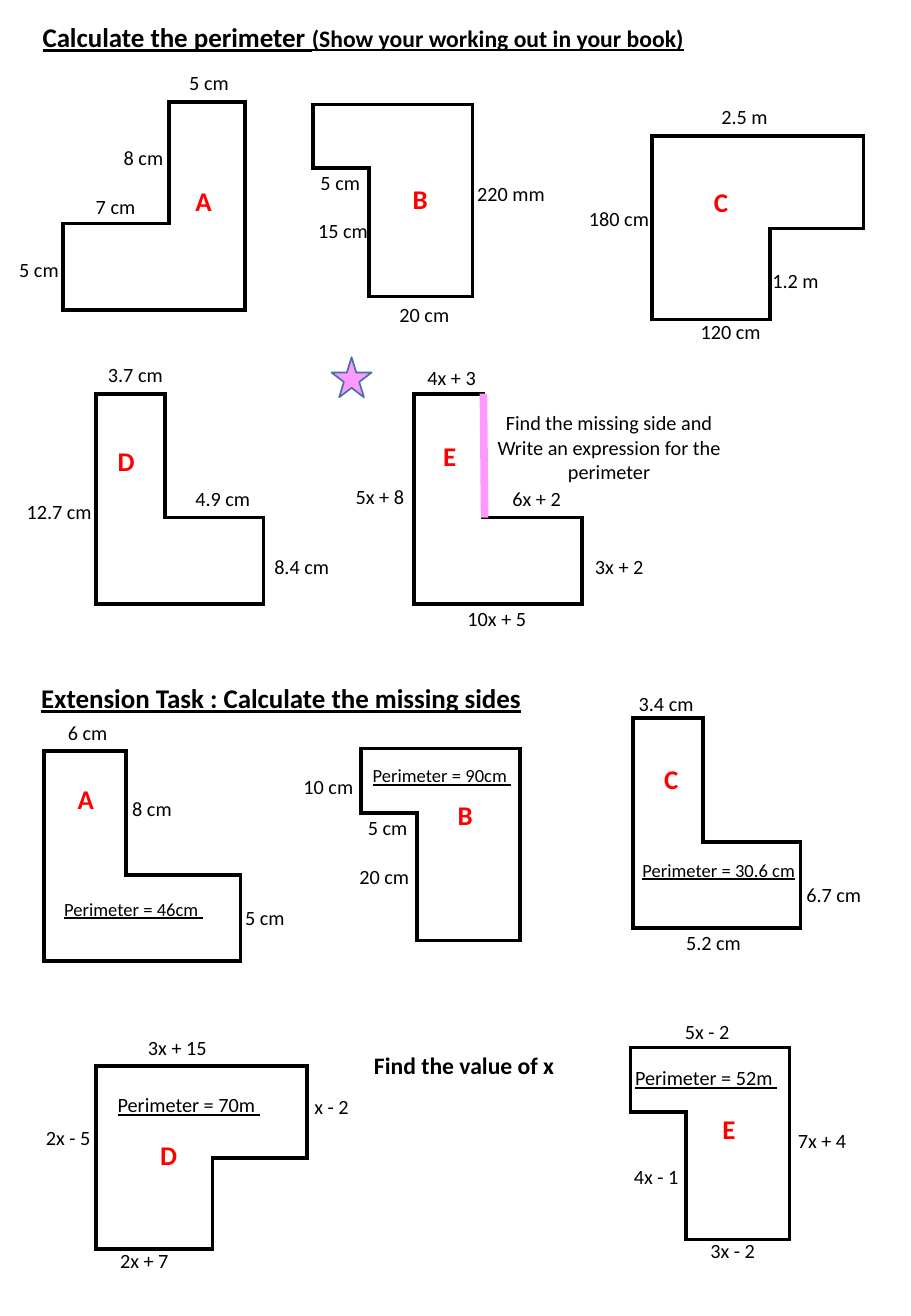
from lxml import etree
from pptx import Presentation
from pptx.dml.color import RGBColor
from pptx.enum.shapes import MSO_CONNECTOR, MSO_SHAPE
from pptx.enum.text import MSO_ANCHOR, MSO_AUTO_SIZE, PP_ALIGN
from pptx.oxml.ns import qn
from pptx.util import Inches, Pt

STAR, STRAIGHT = MSO_SHAPE.STAR_5_POINT, MSO_CONNECTOR.STRAIGHT
TOP, FIT = MSO_ANCHOR.TOP, MSO_AUTO_SIZE.SHAPE_TO_FIT_TEXT
LEFT, CENTER = PP_ALIGN.LEFT, PP_ALIGN.CENTER
FONT = "Calibri"
COLORS = {"ink": "000000", "letter": "FF0000", "pink": "FF99FF", "star": "43739E"}
LETTER_W, LABEL_H, LETTER_H = 0.34, 0.3, 0.37

PERIMETER_TASKS = [
    dict(letter="A", box=(0.52, 0.84, 1.5, 1.71), notch=("tl", 0.87, 1.0), at=(0.99, 0.63),
         labels=[(0.94, -0.31, 0.53, "5 cm"), (0.17, 0.71, 0.53, "7 cm"),
                 (-0.46, 1.23, 0.53, "5 cm"), (0.4, 0.31, 0.53, "8 cm")]),
    dict(letter="B", box=(2.58, 0.86, 1.31, 1.58), notch=("bl", 0.46, 1.06), at=(0.72, 0.59),
         labels=[(0.61, 1.58, 0.62, "20 cm"), (-0.04, 0.49, 0.53, "5 cm"),
                 (1.25, 0.58, 0.77, "220 mm"), (-0.06, 0.89, 0.62, "15 cm")]),
    dict(letter="C", box=(5.37, 1.12, 1.74, 1.51), notch=("br", 0.77, 0.75), at=(0.41, 0.36),
         wrap=True,
         labels=[(0.47, -0.31, 0.71, "2.5 m"), (-0.62, 0.53, 0.71, "180 cm"),
                 (0.3, 1.46, 0.74, "120 cm"), (0.89, 1.04, 0.61, "1.2 m")]),
    dict(letter="D", box=(0.79, 3.24, 1.38, 1.73), notch=("tr", 0.81, 1.02), at=(0.08, 0.37),
         labels=[(-0.67, 0.82, 0.75, "12.7 cm"), (0, -0.31, 0.66, "3.7 cm"),
                 (0.72, 0.71, 0.66, "4.9 cm"), (1.37, 1.27, 0.66, "8.4 cm")]),
    dict(letter="E", box=(3.41, 3.24, 1.38, 1.73), notch=("tr", 0.81, 1.02), at=(0.14, 0.33),
         labels=[(-0.58, 0.7, 0.61, "5x + 8"), (1.39, 1.27, 0.61, "3x + 2"),
                 (0.71, 0.71, 0.61, "6x + 2"), (0.34, 1.7, 0.69, "10x + 5"),
                 (0.01, -0.28, 0.61, "4x + 3")]),
]
EXTENSION_TASKS = [
    dict(letter="A", box=(0.36, 6.18, 1.62, 1.73), notch=("tr", 0.94, 1.02), at=(0.18, 0.21),
         total=(0.07, 1.16, 1.36, 11, "Perimeter = 46cm "),
         labels=[(0.1, -0.3, 0.53, "6 cm"), (1.56, 1.22, 0.53, "5 cm"),
                 (0.63, 0.32, 0.53, "8 cm")]),
    dict(letter="B", box=(2.97, 6.16, 1.31, 1.58), notch=("bl", 0.46, 1.05), at=(0.7, 0.36),
         total=(0, 0.08, 1.36, 11, "Perimeter = 90cm "),
         labels=[(-0.04, 0.5, 0.53, "5 cm"), (-0.57, 0.16, 0.62, "10 cm"),
                 (-0.11, 0.9, 0.62, "20 cm")]),
    dict(letter="C", box=(5.21, 5.91, 1.38, 1.73), notch=("tr", 0.8, 1.02), at=(0.16, 0.32),
         total=(-0.02, 1.11, 1.51, 11, "Perimeter = 30.6 cm"),
         labels=[(-0.05, -0.27, 0.66, "3.4 cm"), (0.34, 1.7, 0.66, "5.2 cm"),
                 (1.33, 1.3, 0.66, "6.7 cm")]),
    dict(letter="D", box=(0.79, 8.77, 1.74, 1.51), notch=("br", 0.78, 0.75), at=(0.43, 0.55),
         wrap=True, total=(0.08, 0.17, 1.39, 12, "Perimeter = 70m "),
         labels=[(0.33, -0.3, 0.8, "3x + 15"), (0.1, 1.45, 0.8, "2x + 7"),
                 (-0.51, 0.44, 0.8, "2x - 5"), (1.7, 0.19, 0.8, "x - 2")]),
    dict(letter="E", box=(5.19, 8.62, 1.31, 1.58), notch=("bl", 0.46, 1.05), at=(0.66, 0.49),
         wrap=True, total=(-0.06, 0.1, 1.39, 12, "Perimeter = 52m "),
         labels=[(0.35, -0.28, 0.8, "5x - 2"), (0.56, 1.52, 0.8, "3x - 2"),
                 (1.28, 0.62, 0.8, "7x + 4"), (-0.07, 0.91, 0.8, "4x - 1")]),
]


def rgb(name):
    """Return the named colour."""
    return RGBColor.from_string(COLORS[name])


def place(sp, x, y, w, h):
    """Move a shape to a box given in inches."""
    sp.left, sp.top, sp.width, sp.height = (Inches(v) for v in (x, y, w, h))


def write(sp, lines, color="ink", bold=False, underline=False, align=LEFT, wrap=False):
    """Fill a shape with paragraphs, each a list of (text, size) runs."""
    tf = sp.text_frame
    tf.word_wrap, tf.auto_size, tf.vertical_anchor = wrap, FIT, TOP
    for i, runs in enumerate(lines):
        p = tf.add_paragraph() if i else tf.paragraphs[0]
        p.alignment = align
        for text, size in runs:
            r = p.add_run()
            r.text = text
            r.font.name, r.font.size = FONT, Pt(size)
            r.font.bold, r.font.underline = bold, underline
            r.font.color.rgb = rgb(color)


def add_text(slide, x, y, w, h, lines, **style):
    """Add a text box with the given paragraphs."""
    sp = slide.shapes.add_textbox(*(Inches(v) for v in (x, y, w, h)))
    write(sp, lines, **style)


def add_outline(slide, box, notch):
    """Draw a rectangle with one corner cut away."""
    x, y, w, h = box
    corner, cut_w, cut_h = notch
    corners = {"tl": (x, y, 1, 1), "tr": (x + w, y, -1, 1),
               "br": (x + w, y + h, -1, -1), "bl": (x, y + h, 1, -1)}
    points = []
    for name, (cx, cy, sx, sy) in corners.items():
        if name != corner:
            points.append((cx, cy))
            continue
        step = [(cx, cy + sy * cut_h), (cx + sx * cut_w, cy + sy * cut_h),
                (cx + sx * cut_w, cy)]
        points += step if sx == sy else step[::-1]
    points = [(Inches(px), Inches(py)) for px, py in points]
    fb = slide.shapes.build_freeform(*points[0], scale=1.0)
    fb.add_line_segments(points[1:], close=True)
    sp = fb.convert_to_shape()
    sp.shadow.inherit = False
    sp.fill.background()
    sp.line.color.rgb, sp.line.width = rgb("ink"), Pt(2.25)
    etree.SubElement(sp._element.spPr.find(qn("a:ln")), qn("a:miter"), lim="800000")


def add_figure(slide, letter, box, notch, at, labels, total=None, wrap=False):
    """Draw one lettered figure with its side lengths and perimeter."""
    x, y = box[:2]
    add_outline(slide, box, notch)
    for dx, dy, w, text in labels:
        add_text(slide, x + dx, y + dy, w, LABEL_H, [[(text, 12)]], wrap=wrap)
    if total:
        dx, dy, w, size, text = total
        add_text(slide, x + dx, y + dy, w, LABEL_H, [[(text, size)]], underline=True)
    add_text(slide, x + at[0], y + at[1], LETTER_W, LETTER_H, [[(letter, 16)]],
             color="letter", bold=True)


def add_challenge(slide, box):
    """Mark the starred figure with its missing side and instruction."""
    x, y = box[:2]
    star = slide.shapes.add_shape(STAR, 0, 0, 0, 0)
    place(star, x - 0.68, y - 0.3, 0.33, 0.33)
    star.shadow.inherit = False
    star.fill.solid()
    star.fill.fore_color.rgb = rgb("pink")
    star.line.color.rgb, star.line.width = rgb("star"), Pt(1)
    side = slide.shapes.add_connector(STRAIGHT, Inches(x + 0.57), Inches(y),
                                      Inches(x + 0.58), Inches(y + 1.02))
    side.line.color.rgb, side.line.width = rgb("pink"), Pt(4.5)
    etree.SubElement(side._element.spPr, qn("a:effectLst"))
    add_text(slide, x + 0.42, y + 0.09, 2.37, 0.71,
             [[("Find the missing side and", 12)],
              [("Write an expression for the perimeter", 12)]], align=CENTER, wrap=True)


def main():
    """Build the perimeter worksheet."""
    prs = Presentation()
    prs.slide_width, prs.slide_height = Inches(7.5), Inches(10.83)
    slide = prs.slides.add_slide(prs.slide_layouts[5])
    title = slide.shapes.title
    place(title, 0.25, 0.12, 5.7, 0.37)
    write(title, [[("Calculate the perimeter ", 16),
                   ("(Show your working out in your book)", 14)]], bold=True, underline=True)
    add_text(slide, 0.24, 5.56, 4.2, 0.37,
             [[("Extension Task : Calculate the missing sides", 16)]],
             bold=True, underline=True)
    for task in PERIMETER_TASKS + EXTENSION_TASKS:
        add_figure(slide, **task)
    add_challenge(slide, PERIMETER_TASKS[-1]["box"])
    add_text(slide, 2.98, 8.6, 1.69, 0.34, [[("Find the value of x", 14)]], bold=True)
    prs.save("out.pptx")


if __name__ == "__main__":
    main()
